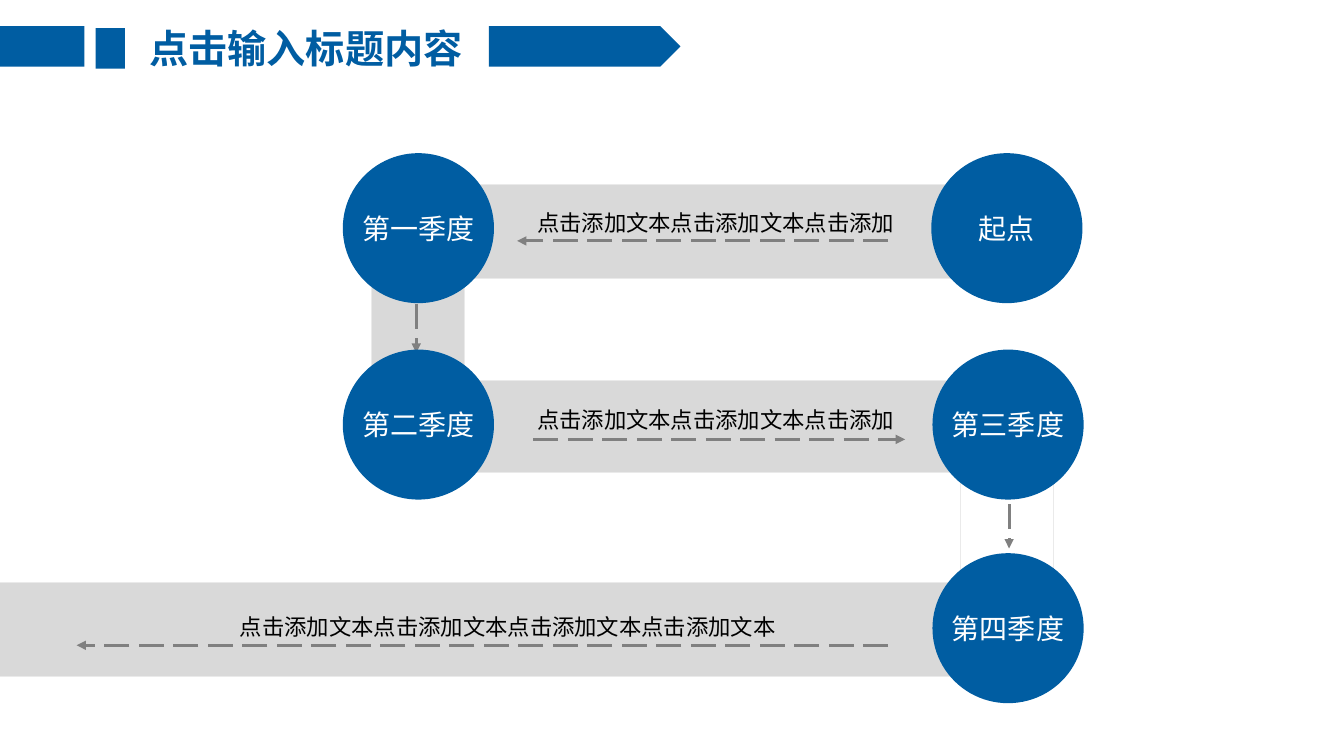
from lxml import etree
from pptx import Presentation
from pptx.dml.color import RGBColor
from pptx.enum import dml, shapes, text
from pptx.oxml.ns import qn
from pptx.util import Cm, Pt

COLOURS = {"blue": "005DA2", "band": "D9D9D9", "edge": "EAEAEA",
           "arrow": "808080", "white": "FFFFFF", "black": "000000"}
CJK_FONT = "Noto Sans CJK SC"
SHAPE = shapes.MSO_SHAPE

deck = Presentation()
deck.slide_width, deck.slide_height = Cm(33.87), Cm(19.05)
page = deck.slides.add_slide(deck.slide_layouts[5])


def add_block(kind, place, fill, edge=None):
    """Add a flat preset shape, outlined only when an edge colour is given."""
    block = page.shapes.add_shape(kind, *map(Cm, place))
    block.shadow.inherit = False
    block.fill.solid()
    block.fill.fore_color.rgb = RGBColor.from_string(COLOURS[fill])
    if edge:
        block.line.color.rgb = RGBColor.from_string(COLOURS[edge])
        block.line.width = Pt(0.75)
    else:
        block.line.fill.background()
    return block


def write(box, wording, colour, spacing=None, **font):
    frame = box.text_frame
    frame.vertical_anchor = text.MSO_ANCHOR.MIDDLE
    para = frame.paragraphs[0]
    para.alignment = text.PP_ALIGN.CENTER
    para.line_spacing = spacing
    span = para.add_run()
    span.text = wording
    for name, value in font.items():
        setattr(span.font, name, value)
    span.font.color.rgb = RGBColor.from_string(COLOURS[colour])
    etree.SubElement(span.font._element, qn("a:ea"), typeface=CJK_FONT)


# Road bands, each with the dashed arrow that runs along it
roads = [
    ((0, 14.68, 26.54, 2.36), 0, "band", (22.38, 16.26, 1.93, 16.26)),
    ((10.29, 9.58, 16.26, 2.34), 0, "band", (13.44, 11.07, 22.81, 11.07)),
    ((22.15, 12.75, 6.45, 2.34), 90, "white", (25.43, 12.7, 25.43, 13.82)),
    ((11.61, 4.65, 14.91, 2.36), 0, "band", (22.38, 6.07, 13.03, 6.07)),
    ((6.91, 7.11, 7.26, 2.34), 90, "band", (10.49, 7.65, 10.49, 8.89)),
]
for place, turn, fill, ends in roads:
    add_block(SHAPE.RECTANGLE, place, fill, "edge").rotation = turn
    arrow = page.shapes.add_connector(shapes.MSO_CONNECTOR.STRAIGHT, *map(Cm, ends))
    arrow.line.color.rgb = RGBColor.from_string(COLOURS["arrow"])
    arrow.line.width = Pt(2.25)
    arrow.line.dash_style = dml.MSO_LINE.LONG_DASH
    etree.SubElement(arrow.line._get_or_add_ln(), qn("a:tailEnd"), type="triangle")
    etree.SubElement(arrow._element.spPr, qn("a:effectLst"))

# Stops along the road
stops = [("起点", 23.47, 3.86), ("第一季度", 8.64, 3.86), ("第二季度", 8.64, 8.81),
         ("第三季度", 23.5, 8.81), ("第四季度", 23.5, 13.94)]
for label, left, top in stops:
    stop = add_block(SHAPE.OVAL, (left, top, 3.81, 3.78), "blue")
    stop.text_frame.word_wrap = False
    write(stop, label, "white", size=Pt(20), name="Calibri")

# Captions above the long arrows
captions = [("点击添加文本点击添加文本点击添加", 13.11, 4.8, 9.86),
            ("点击添加文本点击添加文本点击添加", 13.11, 9.78, 9.86),
            ("点击添加文本点击添加文本点击添加文本点击添加文本", 3.23, 14.99, 19.15)]
for wording, left, top, width in captions:
    caption = page.shapes.add_textbox(*map(Cm, (left, top, width, 1.27)))
    caption.text_frame.word_wrap = True
    write(caption, wording, "black", spacing=1.5, size=Pt(16), name=CJK_FONT)

# Heading
title = page.shapes.title
title_place = {"left": 3.15, "top": 0.48, "width": 9.12, "height": 1.45}
for name, value in title_place.items():
    setattr(title, name, Cm(value))
write(title, "点击输入标题内容", "blue", size=Pt(28), name=CJK_FONT, bold=True)

for kind, left, top, width in [(SHAPE.PENTAGON, 12.32, 0.66, 4.83),
                               (SHAPE.RECTANGLE, 0, 0.66, 2.13),
                               (SHAPE.RECTANGLE, 2.41, 0.71, 0.74)]:
    add_block(kind, (left, top, width, 1.02), "blue")

deck.save("out.pptx")
